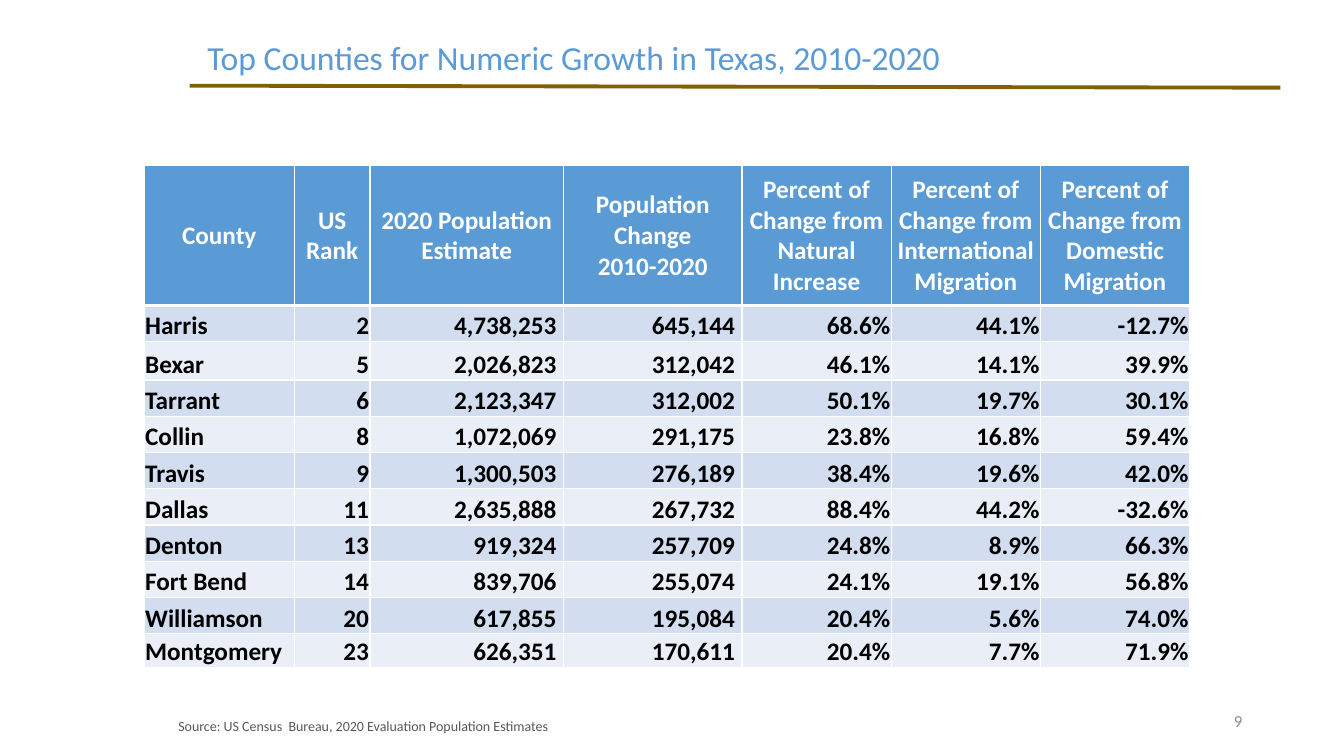
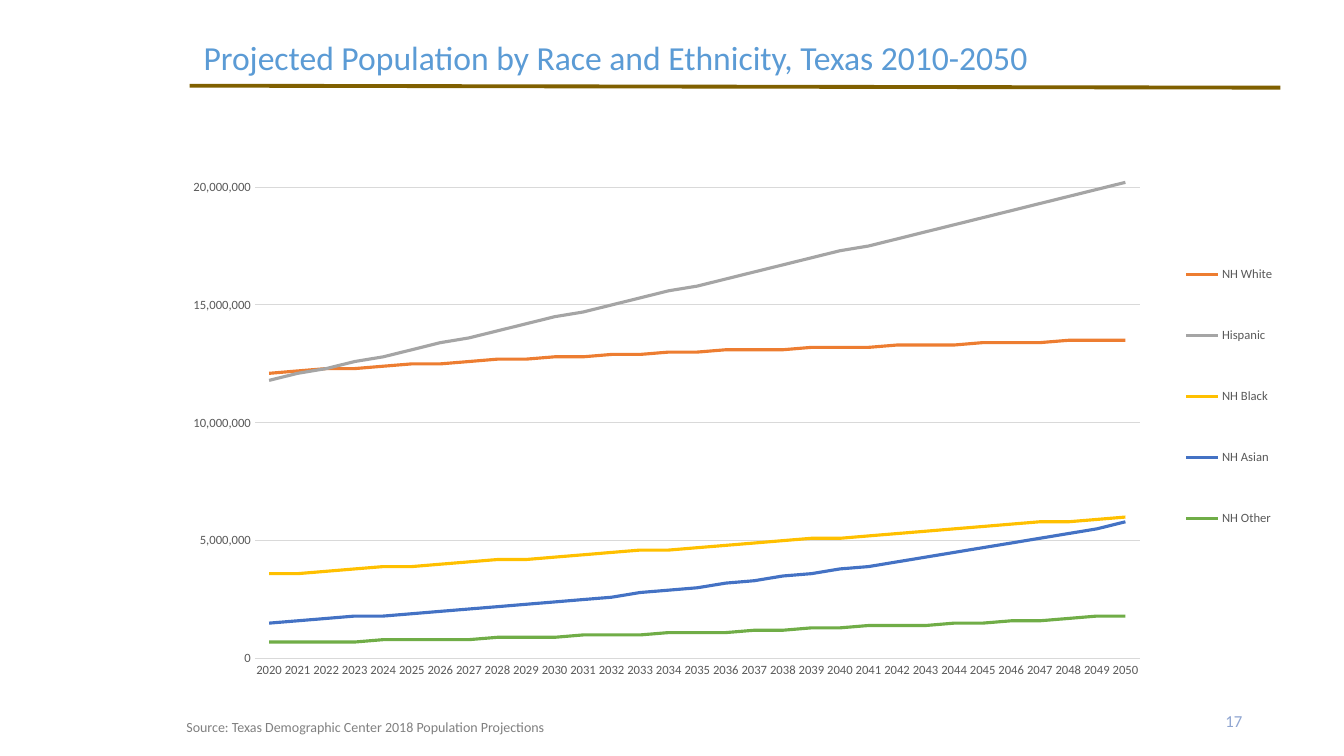
from dataclasses import dataclass

from pptx import Presentation, util as u
from pptx.chart.data import CategoryChartData
from pptx.dml.color import RGBColor
from pptx.enum import chart as ce, shapes, text
from pptx.oxml import ns, parse_xml
from pptx.slide import Slide

PX = 9144
FONT = "Calibri"
BLUE = RGBColor(0x5B, 0x9B, 0xD5)
BROWN = RGBColor(0x80, 0x60, 0x00)
WHITE = RGBColor(0xFF, 0xFF, 0xFF)
BLACK = RGBColor(0x00, 0x00, 0x00)
DARK = RGBColor(0x59, 0x59, 0x59)
GREY = RGBColor(0x80, 0x80, 0x80)
SILVER = RGBColor(0x8C, 0x8C, 0x8C)
STEEL = RGBColor(0x8F, 0xA5, 0xD1)
PALE = RGBColor(0xD9, 0xD9, 0xD9)
BANDS = RGBColor(0xD2, 0xDE, 0xEF), RGBColor(0xEA, 0xEF, 0xF7)

LEFT, CENTER, RIGHT = text.PP_ALIGN.LEFT, text.PP_ALIGN.CENTER, text.PP_ALIGN.RIGHT
TOP, MIDDLE, BOTTOM = text.MSO_ANCHOR.TOP, text.MSO_ANCHOR.MIDDLE, text.MSO_ANCHOR.BOTTOM


@dataclass(frozen=True)
class Box:
    x: int
    y: int
    w: int
    h: int

    def emu(self) -> tuple[int, ...]:
        return tuple(n * PX for n in (self.x, self.y, self.w, self.h))


@dataclass(frozen=True)
class Label:
    words: str
    box: Box
    size: int
    color: RGBColor
    align: text.PP_ALIGN = LEFT
    anchor: text.MSO_ANCHOR = TOP
    lead: float = 1.0


@dataclass(frozen=True)
class Column:
    head: str
    width: int
    align: text.PP_ALIGN = RIGHT
    inset: int = 1


@dataclass(frozen=True)
class Trend:
    name: str
    color: RGBColor
    tenths: tuple[int, ...]


COLUMNS = (
    Column("County", 149, LEFT),
    Column("US Rank", 75),
    Column("2020 Population Estimate", 192, inset=7),
    Column("Population Change\n2010-2020", 177, inset=7),
    Column("Percent of Change from Natural Increase", 148),
    Column("Percent of Change from\nInternational Migration", 148),
    Column("Percent of Change from Domestic Migration", 148),
)
HEIGHTS = (139, 36, 38, 36, 36, 36, 36, 36, 36, 36, 33)
COUNTIES = (
    ("Harris", "2", "4,738,253", "645,144", "68.6%", "44.1%", "-12.7%"),
    ("Bexar", "5", "2,026,823", "312,042", "46.1%", "14.1%", "39.9%"),
    ("Tarrant", "6", "2,123,347", "312,002", "50.1%", "19.7%", "30.1%"),
    ("Collin", "8", "1,072,069", "291,175", "23.8%", "16.8%", "59.4%"),
    ("Travis", "9", "1,300,503", "276,189", "38.4%", "19.6%", "42.0%"),
    ("Dallas", "11", "2,635,888", "267,732", "88.4%", "44.2%", "-32.6%"),
    ("Denton", "13", "919,324", "257,709", "24.8%", "8.9%", "66.3%"),
    ("Fort Bend", "14", "839,706", "255,074", "24.1%", "19.1%", "56.8%"),
    ("Williamson", "20", "617,855", "195,084", "20.4%", "5.6%", "74.0%"),
    ("Montgomery", "23", "626,351", "170,611", "20.4%", "7.7%", "71.9%"),
)
TRENDS = (
    Trend("NH White", RGBColor(0xED, 0x7D, 0x31), (
        121, 122, 123, 123, 124, 125, 125, 126, 127, 127, 128, 128, 129, 129, 130, 130,
        131, 131, 131, 132, 132, 132, 133, 133, 133, 134, 134, 134, 135, 135, 135)),
    Trend("Hispanic", RGBColor(0xA5, 0xA5, 0xA5), (
        118, 121, 123, 126, 128, 131, 134, 136, 139, 142, 145, 147, 150, 153, 156, 158,
        161, 164, 167, 170, 173, 175, 178, 181, 184, 187, 190, 193, 196, 199, 202)),
    Trend("NH Black", RGBColor(0xFF, 0xC0, 0x00), (
        36, 36, 37, 38, 39, 39, 40, 41, 42, 42, 43, 44, 45, 46, 46, 47,
        48, 49, 50, 51, 51, 52, 53, 54, 55, 56, 57, 58, 58, 59, 60)),
    Trend("NH Asian", RGBColor(0x44, 0x72, 0xC4), (
        15, 16, 17, 18, 18, 19, 20, 21, 22, 23, 24, 25, 26, 28, 29, 30,
        32, 33, 35, 36, 38, 39, 41, 43, 45, 47, 49, 51, 53, 55, 58)),
    Trend("NH Other", RGBColor(0x70, 0xAD, 0x47), (
        7, 7, 7, 7, 8, 8, 8, 8, 9, 9, 9, 10, 10, 10, 11, 11,
        11, 12, 12, 13, 13, 14, 14, 14, 15, 15, 16, 16, 17, 18, 18)),
)


def style(font, size: int, color: RGBColor, bold: bool = False) -> None:
    font.name = FONT
    font.size = u.Pt(size)
    font.color.rgb = color
    font.bold = bold


def write(slide: Slide, label: Label) -> None:
    frame = slide.shapes.add_textbox(*label.box.emu()).text_frame
    frame.word_wrap = True
    frame.vertical_anchor = label.anchor
    para = frame.paragraphs[0]
    para.text = label.words
    para.alignment = label.align
    para.line_spacing = label.lead
    style(para.font, label.size, label.color)


def start(deck, page: int, tint: RGBColor, title: Label, source: Label) -> Slide:
    slide = deck.slides.add_slide(deck.slide_layouts[6])
    rule = slide.shapes.add_connector(
        shapes.MSO_CONNECTOR.STRAIGHT, 188 * PX, 85 * PX, 1270 * PX, 87 * PX)
    rule.line.color.rgb = BROWN
    rule.line.width = u.Pt(2.75)
    rule._element.spPr.append(parse_xml(f"<a:effectLst {ns.nsdecls('a')}/>"))
    number = Label(str(page), Box(942, 695, 300, 40), 12, tint, RIGHT, MIDDLE)
    for label in (title, source, number):
        write(slide, label)
    return slide


def edge(cell, base: int) -> None:
    props = cell._tc.get_or_add_tcPr()
    sides = (("L", 1), ("R", 1), ("T", 1), ("B", base))
    for spot, (side, width) in enumerate(sides):
        props.insert(spot, parse_xml(
            f'<a:ln{side} {ns.nsdecls("a")} w="{u.Pt(width)}"><a:solidFill>'
            f'<a:srgbClr val="{WHITE}"/></a:solidFill></a:ln{side}>'))


def add_grid(slide: Slide, box: Box) -> None:
    rows = (tuple(col.head for col in COLUMNS),) + COUNTIES
    grid = slide.shapes.add_table(len(rows), len(COLUMNS), *box.emu()).table
    for col, spec in zip(grid.columns, COLUMNS):
        col.width = spec.width * PX
    for r, (row, height) in enumerate(zip(rows, HEIGHTS)):
        grid.rows[r].height = height * PX
        head = r == 0
        for c, (words, spec) in enumerate(zip(row, COLUMNS)):
            cell = grid.cell(r, c)
            cell.text = words
            cell.margin_left = cell.margin_top = PX
            cell.margin_right = PX if head else spec.inset * PX
            cell.margin_bottom = 0
            cell.vertical_anchor = MIDDLE if head else BOTTOM
            cell.fill.solid()
            cell.fill.fore_color.rgb = BLUE if head else BANDS[(r - 1) % 2]
            edge(cell, 3 if head else 1)
            for para in cell.text_frame.paragraphs:
                para.alignment = CENTER if head else spec.align
                style(para.font, 18, WHITE if head else BLACK, True)


def place(node, spot: int, x: float, y: float, w: float, h: float, inner: bool) -> None:
    for old in node.findall(ns.qn("c:layout")):
        node.remove(old)
    target = '<c:layoutTarget val="inner"/>' if inner else ""
    sizes = "".join(f'<c:{key} val="{val}"/>' for key, val in zip("xywh", (x, y, w, h)))
    node.insert(spot, parse_xml(
        f'<c:layout {ns.nsdecls("c")}><c:manualLayout>{target}'
        f'<c:xMode val="edge"/><c:yMode val="edge"/>{sizes}'
        f'</c:manualLayout></c:layout>'))


def add_lines(slide: Slide, box: Box) -> None:
    data = CategoryChartData(number_format="#,##0")
    data.categories = [str(year) for year in range(2020, 2051)]
    for trend in TRENDS:
        data.add_series(trend.name, [n * 100_000 for n in trend.tenths])
    chart = slide.shapes.add_chart(ce.XL_CHART_TYPE.LINE, *box.emu(), data).chart
    chart.has_title = False
    style(chart.font, 10, BLACK)
    chart.plots[0].vary_by_categories = False
    for line, trend in zip(chart.plots[0].series, TRENDS):
        line.smooth = False
        line.marker.style = ce.XL_MARKER_STYLE.NONE
        line.format.line.color.rgb = trend.color
        line.format.line.width = u.Pt(2.25)

    years, people = chart.category_axis, chart.value_axis
    for axis in (years, people):
        axis.major_tick_mark = axis.minor_tick_mark = ce.XL_TICK_MARK.NONE
        style(axis.tick_labels.font, 9, DARK)
    people.minimum_scale = 0
    people.maximum_scale = 22_500_000
    people.major_unit = 5_000_000
    people.tick_labels.number_format = "#,##0"
    people.tick_labels.number_format_is_linked = False
    people.format.line.fill.background()
    for line in (years.format.line, people.major_gridlines.format.line):
        line.color.rgb = PALE
        line.width = u.Pt(0.75)

    chart.has_legend = True
    chart.legend.position = ce.XL_LEGEND_POSITION.RIGHT
    chart.legend.include_in_layout = False
    style(chart.legend.font, 9, DARK)
    place(chart.element.xpath("//c:plotArea")[0], 0, 0.07, 0.03, 0.79, 0.92, True)
    place(chart.element.xpath("//c:legend")[0], 1, 0.89, 0.19, 0.1, 0.61, False)


def main() -> None:
    deck = Presentation()
    deck.slide_width, deck.slide_height = 1333 * PX, 750 * PX
    slide = start(
        deck, 9, SILVER,
        Label("Top Counties for Numeric Growth in Texas, 2010-2020",
              Box(185, 32, 768, 50), 24, BLUE, CENTER),
        Label("Source: US Census  Bureau, 2020 Evaluation Population Estimates",
              Box(167, 706, 500, 28), 10, DARK, lead=1.07))
    add_grid(slide, Box(143, 164, 1036, 498))
    slide = start(
        deck, 17, STEEL,
        Label("Projected Population by Race and Ethnicity, Texas 2010-2050",
              Box(192, 8, 1022, 103), 24, BLUE, anchor=MIDDLE, lead=0.9),
        Label("Source: Texas Demographic Center 2018 Population Projections",
              Box(175, 708, 958, 27), 10, GREY))
    add_lines(slide, Box(175, 110, 1111, 572))
    deck.save("out.pptx")


if __name__ == "__main__":
    main()
